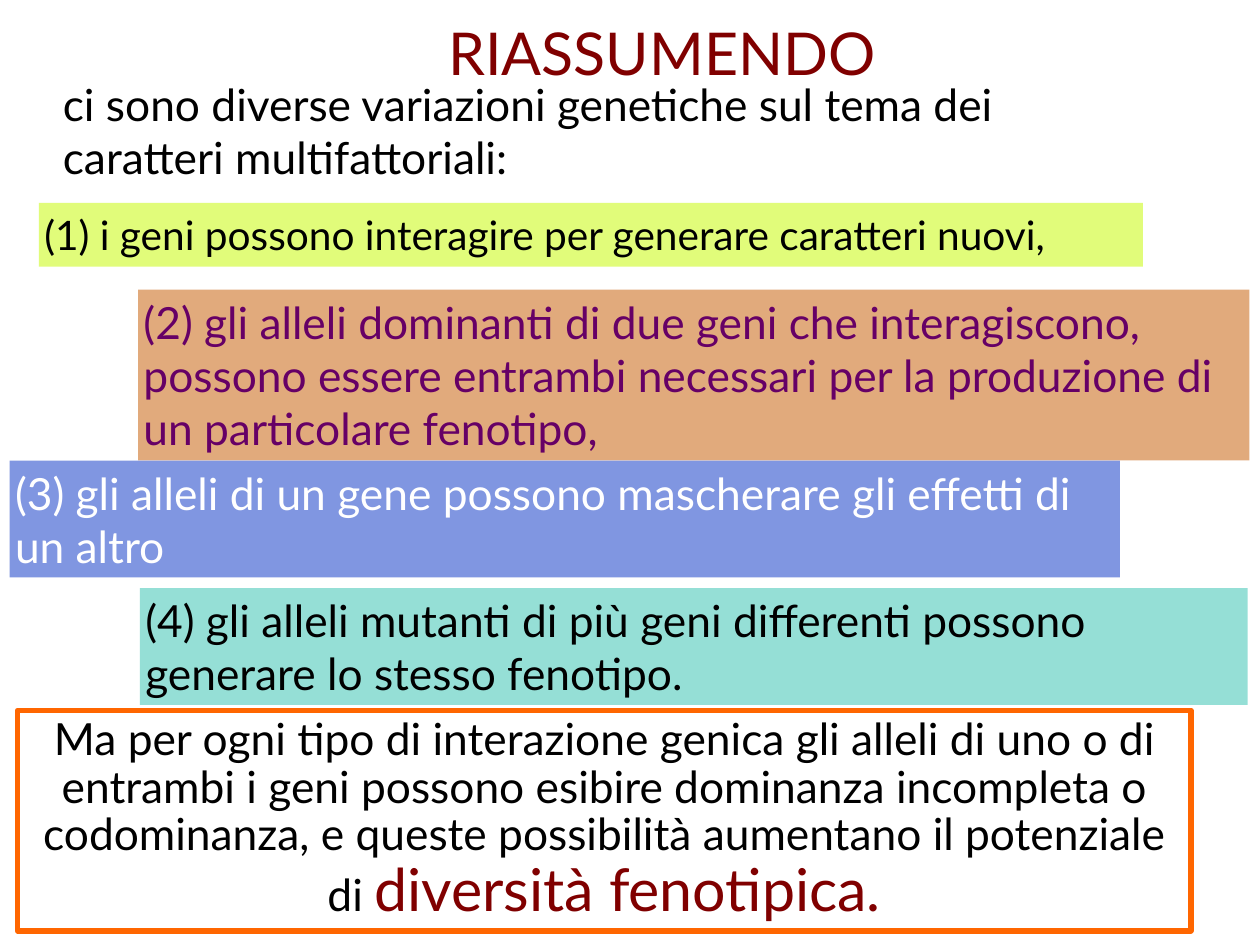
from lxml.etree import SubElement
from pptx import Presentation
from pptx.dml.color import RGBColor
from pptx.enum.shapes import MSO_SHAPE
from pptx.enum.text import MSO_ANCHOR, MSO_AUTO_SIZE, PP_ALIGN
from pptx.oxml.ns import qn
from pptx.util import Inches, Pt

BLACK = RGBColor(0x00, 0x00, 0x00)
WHITE = RGBColor(0xFF, 0xFF, 0xFF)
PURPLE = RGBColor(0x66, 0x00, 0x66)
MAROON = RGBColor(0x80, 0x00, 0x00)
ORANGE = RGBColor(0xFF, 0x66, 0x00)
LIME = RGBColor(0xCD, 0xFB, 0x22)
BROWN = RGBColor(0xD2, 0x7D, 0x37)
BLUE = RGBColor(0x3D, 0x5F, 0xD1)
TEAL = RGBColor(0x5D, 0xCF, 0xC1)

FONT = "Lato"
INSET = Inches(0.06)

# Runs: text, size, colour
TITLE = [("RIASSUMENDO", 48, MAROON)]
INTRO = [("ci sono diverse variazioni genetiche sul tema dei caratteri "
          "multifattoriali:", 36, BLACK)]
CONCLUSION = [
    ("Ma per ogni tipo di interazione genica gli alleli di uno o di entrambi "
     "i geni possono esibire dominanza incompleta o codominanza, e queste "
     "possibilità aumentano il potenziale di ", 36, BLACK),
    ("diversità fenotipica.", 48, MAROON),
]

# Position, fill, opacity in percent, text, size, text colour
VARIATIONS = [
    ((0.44, 2.29, 12.46, 0.72), LIME, 60,
     "(1) i geni possono interagire per generare caratteri nuovi,", 33, BLACK),
    ((1.56, 3.27, 12.54, 1.93), BROWN, 65,
     "(2) gli alleli dominanti di due geni che interagiscono, possono essere "
     "entrambi necessari per la produzione di un particolare fenotipo,",
     36, PURPLE),
    ((0.11, 5.2, 12.53, 1.32), BLUE, 65,
     "(3) gli alleli di un gene possono mascherare gli effetti di un altro",
     36, WHITE),
    ((1.58, 6.64, 12.5, 1.32), TEAL, 65,
     "(4) gli alleli mutanti di più geni differenti possono generare lo "
     "stesso fenotipo.", 36, BLACK),
]


def inches(position):
    return [Inches(length) for length in position]


def write(shape, runs, align=PP_ALIGN.LEFT):
    frame = shape.text_frame
    frame.word_wrap = True
    frame.auto_size = MSO_AUTO_SIZE.SHAPE_TO_FIT_TEXT
    frame.vertical_anchor = MSO_ANCHOR.MIDDLE
    frame.margin_left = frame.margin_right = INSET
    frame.margin_top = frame.margin_bottom = INSET
    paragraph = frame.paragraphs[0]
    paragraph.alignment = align
    for text, size, color in runs:
        run = paragraph.add_run()
        run.text = text
        run.font.name = FONT
        run.font.size = Pt(size)
        run.font.color.rgb = color
    return paragraph


def add_panel(slide, position):
    panel = slide.shapes.add_shape(MSO_SHAPE.RECTANGLE, *inches(position))
    panel.shadow.inherit = False
    return panel


def set_opacity(shape, percent):
    color = shape.fill._xPr.find(qn("a:solidFill"))[0]
    SubElement(color, qn("a:alpha")).set("val", str(percent * 1000))


def main():
    prs = Presentation()
    prs.slide_width, prs.slide_height = Inches(14.22), Inches(10.67)
    slide = prs.slides.add_slide(prs.slide_layouts[5])

    title = slide.shapes.title
    title.left, title.top, title.width, title.height = inches(
        (5, 0.12, 7.05, 0.92))
    write(title, TITLE)

    for position, fill, opacity, text, size, color in VARIATIONS:
        variation = add_panel(slide, position)
        variation.fill.solid()
        variation.fill.fore_color.rgb = fill
        set_opacity(variation, opacity)
        variation.line.fill.background()
        write(variation, [(text, size, color)])

    conclusion = add_panel(slide, (0.2, 8.02, 13.24, 2.49))
    conclusion.fill.background()
    conclusion.line.color.rgb = ORANGE
    conclusion.line.width = Pt(4.5)
    write(conclusion, CONCLUSION, PP_ALIGN.CENTER).line_spacing = 0.9

    intro = slide.shapes.add_textbox(*inches((0.65, 0.81, 12.44, 1.32)))
    write(intro, INTRO)

    prs.save("out.pptx")


if __name__ == "__main__":
    main()
